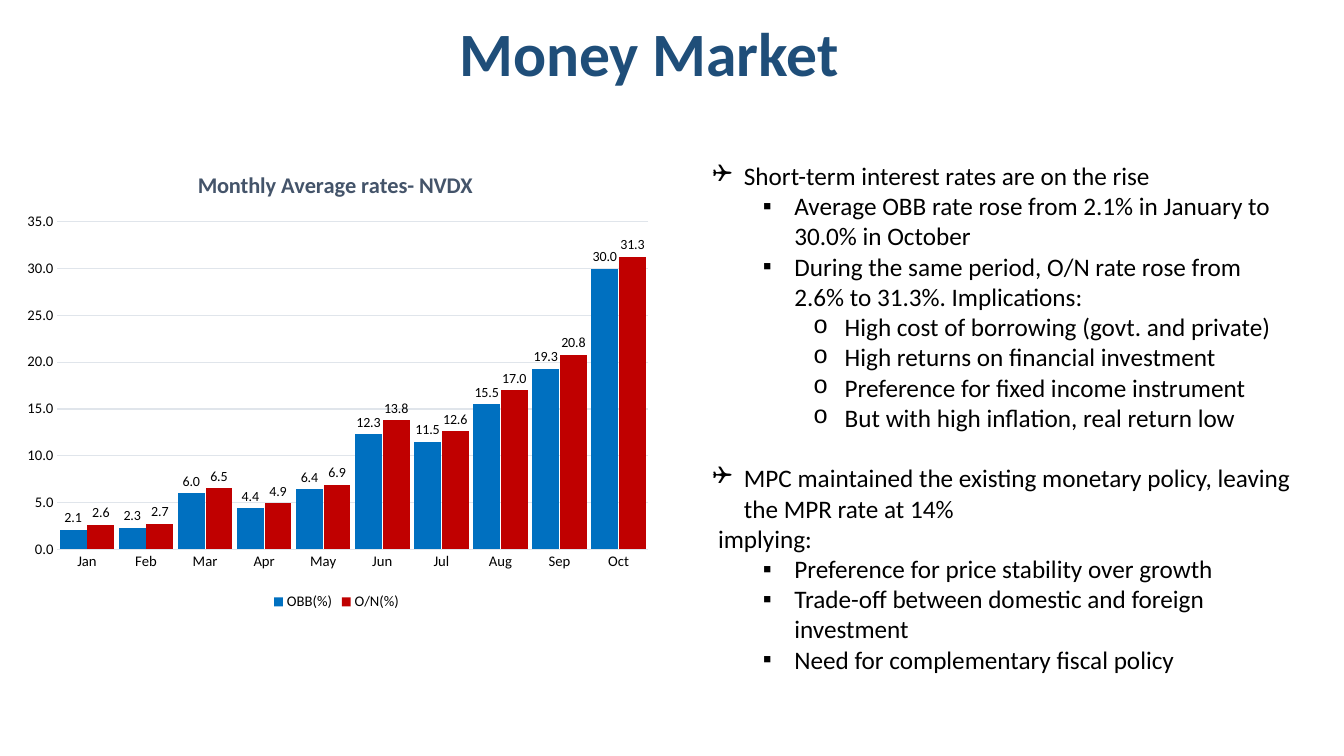
from lxml import etree
from pptx import Presentation
from pptx.chart.data import CategoryChartData
from pptx.dml.color import RGBColor
from pptx.enum.chart import XL_CHART_TYPE, XL_LABEL_POSITION, XL_LEGEND_POSITION, XL_TICK_MARK
from pptx.enum.text import MSO_ANCHOR, PP_ALIGN
from pptx.oxml.ns import qn
from pptx.util import Pt

COLUMNS = XL_CHART_TYPE.COLUMN_CLUSTERED
OUTSIDE_END = XL_LABEL_POSITION.OUTSIDE_END
BOTTOM = XL_LEGEND_POSITION.BOTTOM
NO_TICK = XL_TICK_MARK.NONE
MIDDLE = MSO_ANCHOR.MIDDLE
CENTER = PP_ALIGN.CENTER

NAVY = RGBColor(0x1F, 0x4E, 0x79)
SLATE = RGBColor(0x44, 0x54, 0x6A)
BLACK = RGBColor(0, 0, 0)
BLUE = RGBColor(0x00, 0x70, 0xC0)
RED = RGBColor(0xC0, 0x00, 0x00)
GRID = RGBColor(0xE0, 0xE5, 0xEB)
FONT = "Calibri"

MONTHS = ["Jan", "Feb", "Mar", "Apr", "May", "Jun", "Jul", "Aug", "Sep", "Oct"]
RATES = [
    ("OBB(%)", BLUE, [2.1, 2.3, 6.0, 4.4, 6.4, 12.3, 11.5, 15.5, 19.3, 30.0]),
    ("O/N(%)", RED, [2.6, 2.7, 6.5, 4.9, 6.9, 13.8, 12.6, 17.0, 20.8, 31.3]),
]

BULLETS = [("❑", "Wingdings"), ("▪", "Arial"), ("o", "Courier New")]
# Level (None for a line without bullet), space before, text
POINTS = [
    (0, 0, "Short-term interest rates are on the rise"),
    (1, 0, "Average OBB rate rose from 2.1% in January to 30.0% in October"),
    (1, 0, "During the same period, O/N rate rose from 2.6% to 31.3%. Implications:"),
    (2, 0, "High cost of borrowing (govt. and private)"),
    (2, 0, "High returns on financial investment"),
    (2, 0, "Preference for fixed income instrument"),
    (2, 0, "But with high inflation, real return low"),
    (0, 21.6, "MPC maintained the existing monetary policy, leaving the MPR rate at 14%"),
    (None, 0, "implying:"),
    (1, 0, "Preference for price stability over growth"),
    (1, 0, "Trade-off between domestic and foreign investment"),
    (1, 0, "Need for complementary fiscal policy"),
]


def set_font(font, size, color=BLACK, bold=False):
    for name, value in {"name": FONT, "size": Pt(size), "bold": bold}.items():
        setattr(font, name, value)
    font.color.rgb = color


def add_text_frame(slide, box):
    tf = slide.shapes.add_textbox(*map(Pt, box)).text_frame
    tf.word_wrap = True
    return tf


def add_title(slide, box, text):
    tf = add_text_frame(slide, box)
    tf.vertical_anchor = MIDDLE
    p = tf.paragraphs[0]
    p.alignment, p.line_spacing = CENTER, 0.9
    r = p.add_run()
    r.text = text
    set_font(r.font, 44, NAVY, True)


def set_layout(parent, index, **fractions):
    """Place a chart part by fractions of the chart area."""
    old = parent.find(qn("c:layout"))
    if old is not None:
        parent.remove(old)
    layout = etree.Element(qn("c:layout"))
    manual = etree.SubElement(layout, qn("c:manualLayout"))
    if "w" in fractions:
        etree.SubElement(manual, qn("c:layoutTarget"), val="inner")
    for side in "xy":
        etree.SubElement(manual, qn(f"c:{side}Mode"), val="edge")
    for key, value in fractions.items():
        etree.SubElement(manual, qn(f"c:{key}"), val=str(value))
    parent.insert(index, layout)


def style_axes(chart):
    for axis in (chart.category_axis, chart.value_axis):
        axis.major_tick_mark = axis.minor_tick_mark = NO_TICK
        set_font(axis.tick_labels.font, 10.5)
    values = chart.value_axis
    values.minimum_scale, values.maximum_scale, values.major_unit = 0, 35, 5
    values.tick_labels.number_format = "0.0"
    values.tick_labels.number_format_is_linked = False
    values.format.line.fill.background()
    for line in (chart.category_axis.format.line, values.major_gridlines.format.line):
        line.color.rgb, line.width = GRID, Pt(0.75)


def add_rates_chart(slide, box, title):
    data = CategoryChartData(number_format="0.0")
    data.categories = MONTHS
    for name, _, rates in RATES:
        data.add_series(name, rates)
    chart = slide.shapes.add_chart(COLUMNS, *map(Pt, box), data).chart
    set_font(chart.font, 10)
    style_axes(chart)

    chart.has_title = True
    p = chart.chart_title.text_frame.paragraphs[0]
    r = p.add_run()
    r.text = title
    set_font(r.font, 16, SLATE, True)
    chart.has_legend = True
    chart.legend.position = BOTTOM
    chart.legend.include_in_layout = False
    set_font(chart.legend.font, 10.5)

    plot = chart.plots[0]
    plot.gap_width, plot.overlap, plot.vary_by_categories = 17, -3, False
    for series, (_, color, _) in zip(plot.series, RATES):
        series.format.fill.solid()
        series.format.fill.fore_color.rgb = color
        labels = series.data_labels
        formats = {"show_value": True, "position": OUTSIDE_END,
                   "number_format": "0.0", "number_format_is_linked": False}
        for name, value in formats.items():
            setattr(labels, name, value)
        set_font(labels.font, 10)

    root = chart._chartSpace
    set_layout(root.find(".//" + qn("c:title")), 1, x=0.28, y=0.04)
    set_layout(root.find(".//" + qn("c:plotArea")), 0, x=0.07, y=0.16, w=0.91, h=0.7)


def set_bullet(p, level):
    char, font = BULLETS[level]
    p.level = level
    pPr = p._p.get_or_add_pPr()
    pPr.set("marL", str(Pt(22.5 + 36 * level)))
    pPr.set("indent", str(Pt(-22.5)))
    etree.SubElement(pPr, qn("a:buFont"), typeface=font)
    etree.SubElement(pPr, qn("a:buChar"), char=char)


def add_points(slide, box):
    tf = add_text_frame(slide, box)
    for i, (level, space, text) in enumerate(POINTS):
        p = tf.add_paragraph() if i else tf.paragraphs[0]
        p.space_before = Pt(space)
        if level is None:
            p._p.get_or_add_pPr().set("marL", str(Pt(4)))
        else:
            set_bullet(p, level)
        r = p.add_run()
        r.text = text
        set_font(r.font, 18)


def main():
    prs = Presentation()
    prs.slide_width, prs.slide_height = Pt(960), Pt(540)
    slide = prs.slides.add_slide(prs.slide_layouts[6])
    add_title(slide, (49.7, 15.8, 828, 49.7), "Money Market")
    add_rates_chart(slide, (8.6, 105.1, 463.7, 334.1), "Monthly Average rates- NVDX")
    add_points(slide, (501.8, 110.9, 431.3, 421.9))
    prs.save("out.pptx")


if __name__ == "__main__":
    main()
